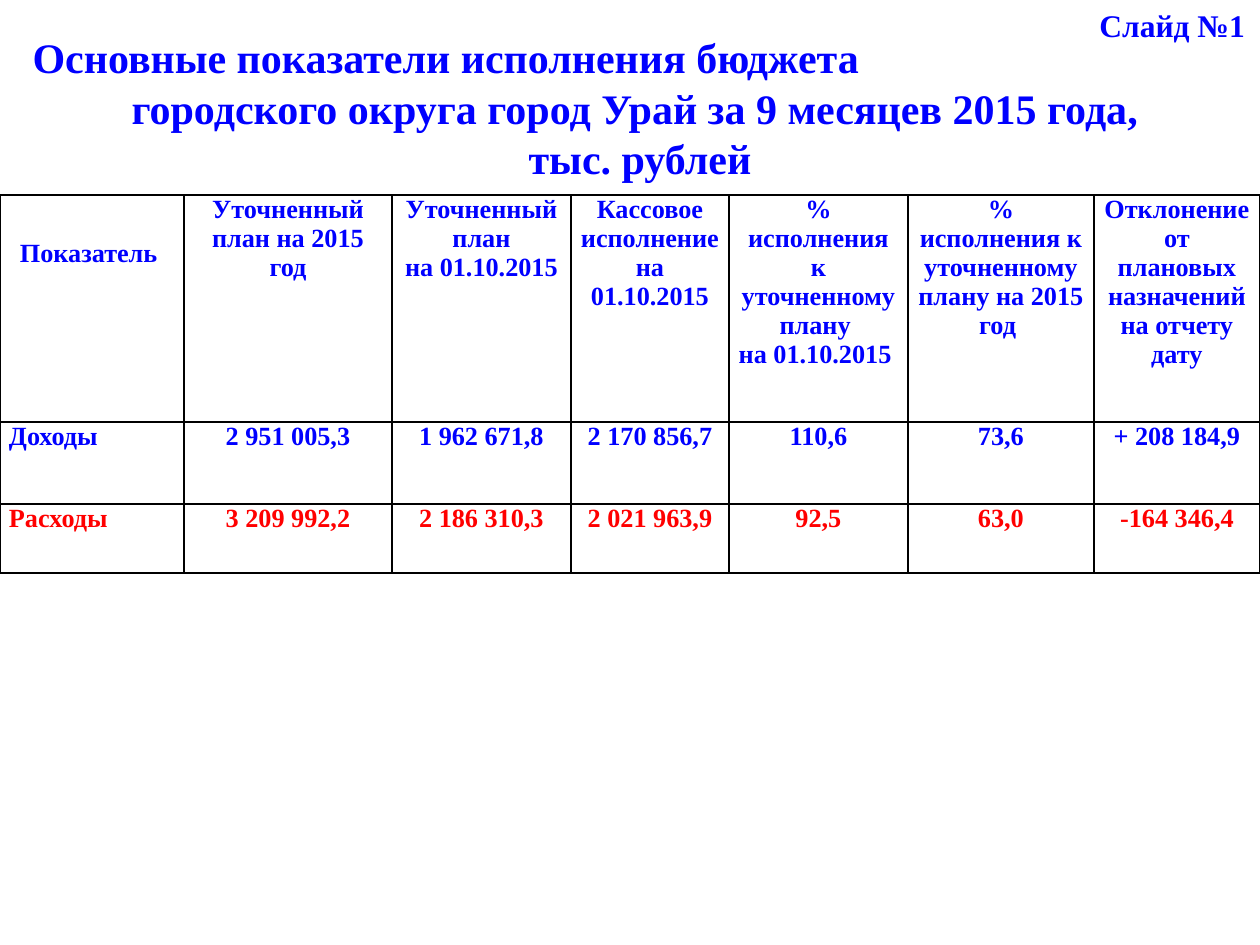
from lxml import etree
from pptx import Presentation
from pptx.dml.color import RGBColor
from pptx.enum.text import MSO_ANCHOR, MSO_AUTO_SIZE, PP_ALIGN
from pptx.oxml.ns import qn
from pptx.util import Pt

LEFT, CENTER = PP_ALIGN.LEFT, PP_ALIGN.CENTER
TOP = MSO_ANCHOR.TOP
NO_AUTOFIT = MSO_AUTO_SIZE.NONE

TITLE = [
    "Основные показатели исполнения бюджета",
    "городского округа город Урай за 9 месяцев 2015 года, ",
    "тыс. рублей",
]
SLIDE_LABEL = "Слайд №1"
HEADER = [
    "Показатель ",
    "Уточненный план на 2015 год",
    "Уточненный план\nна 01.10.2015",
    "Кассовое исполнение на 01.10.2015",
    "% исполнения к уточненному плану \nна 01.10.2015 ",
    "% исполнения к уточненному плану на 2015 год ",
    "Отклонение от плановых назначений на отчету дату",
]
INCOME = ["Доходы", "2 951 005,3", "1 962 671,8", "2 170 856,7", "110,6", "73,6", "+ 208 184,9"]
EXPENSES = ["Расходы", "3 209 992,2", "2 186 310,3", "2 021 963,9", "92,5", "63,0", "-164 346,4"]

THEME = {
    "font": "Times New Roman",
    "main": "0000FF",
    "expense": "FF0000",
    "border": "000000",
    "title": 24,
    "label": 18,
    "cell": 15,
    "title_pitch": 28.6,
}

ROWS = [(HEADER, 227, "main"), (INCOME, 82, "main"), (EXPENSES, 69, "expense")]
COL_WIDTHS = [184, 208, 179, 158, 179, 186, 166]
SLIDE_W, SLIDE_H = 1260, 945
TABLE_TOP = 195
CELL_PAD = 9
FIRST_HEADER_DROP = 44
TITLE_INDENT = 20


def px(n):
    return round(n * 914400 / 126)


def write(tf, lines, size, color="main", align=CENTER, pitch=None):
    for i, line in enumerate(lines):
        p = tf.paragraphs[0] if i == 0 else tf.add_paragraph()
        p.alignment = align
        if pitch:
            p.line_spacing = Pt(pitch)
        r = p.add_run()
        r.text = line
        r.font.name = THEME["font"]
        r.font.size = Pt(THEME[size])
        r.font.bold = True
        r.font.color.rgb = RGBColor.from_string(THEME[color])


def add_borders(cell):
    tc_pr = cell._tc.get_or_add_tcPr()
    for side in ("lnL", "lnR", "lnT", "lnB"):
        ln = etree.SubElement(tc_pr, qn(f"a:{side}"), w=str(Pt(1)))
        fill = etree.SubElement(ln, qn("a:solidFill"))
        etree.SubElement(fill, qn("a:srgbClr"), val=THEME["border"])


def add_title(slide):
    sp = slide.shapes.title
    sp.left, sp.top, sp.width, sp.height = px(0), px(26), px(SLIDE_W), px(165)
    tf = sp.text_frame
    tf.auto_size = NO_AUTOFIT
    tf.word_wrap = True
    tf.vertical_anchor = TOP
    write(tf, TITLE, "title", pitch=THEME["title_pitch"])
    first = tf.paragraphs[0]
    first.alignment = LEFT
    first._p.get_or_add_pPr().set("marL", str(px(TITLE_INDENT)))


def add_budget_table(slide):
    height = sum(h for _, h, _ in ROWS)
    frame = slide.shapes.add_table(
        len(ROWS), len(COL_WIDTHS), px(0), px(TABLE_TOP), px(SLIDE_W), px(height)
    )
    table = frame.table
    table.first_row = table.horz_banding = False
    for col, width in zip(table.columns, COL_WIDTHS):
        col.width = px(width)
    for i, (texts, row_height, color) in enumerate(ROWS):
        table.rows[i].height = px(row_height)
        for j, text in enumerate(texts):
            cell = table.cell(i, j)
            cell.margin_left = cell.margin_right = px(CELL_PAD)
            cell.margin_top = px(FIRST_HEADER_DROP if i == j == 0 else 0)
            cell.margin_bottom = 0
            cell.vertical_anchor = TOP
            add_borders(cell)
            cell.fill.background()
            align = LEFT if i > 0 and j == 0 else CENTER
            write(cell.text_frame, text.split("\n"), "cell", color, align)


def add_label(slide):
    sp = slide.shapes.add_textbox(px(1087), px(0), px(173), px(50))
    sp.text_frame.word_wrap = False
    write(sp.text_frame, [SLIDE_LABEL], "label", align=LEFT)


def main():
    prs = Presentation()
    prs.slide_width, prs.slide_height = px(SLIDE_W), px(SLIDE_H)
    slide = prs.slides.add_slide(prs.slide_layouts[5])
    add_title(slide)
    add_budget_table(slide)
    add_label(slide)
    prs.save("out.pptx")


if __name__ == "__main__":
    main()
